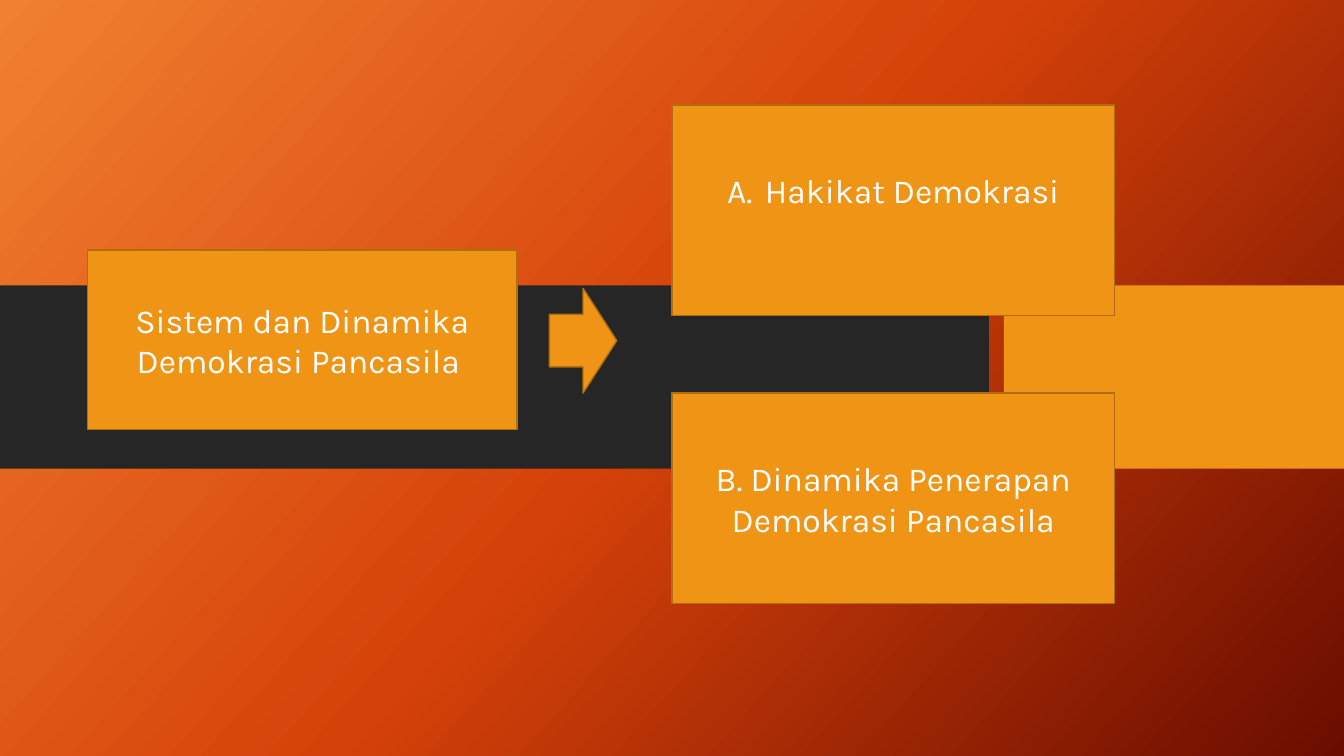
from copy import deepcopy

from lxml import etree
from pptx import Presentation
from pptx.dml.color import RGBColor
from pptx.enum import shapes, text
from pptx.oxml import ns
from pptx.util import Pt

COLORS = {
    "glow": "F18031", "flame": "D54209", "ember": "6A0D00",
    "band": "262626", "amber": "F09415", "edge": "B26D10", "text": "FFFFFF",
}
RECT = shapes.MSO_SHAPE.RECTANGLE


def rgb(name):
    return RGBColor.from_string(COLORS[name])


def add_block(kind, left, top, width, height, fill, edge=None):
    block = page.shapes.add_shape(kind, Pt(left), Pt(top), Pt(width), Pt(height))
    block.shadow.inherit = False
    block.fill.solid()
    block.fill.fore_color.rgb = rgb(fill)
    if edge:
        block.line.color.rgb = rgb(edge)
        block.line.width = Pt(1)
    else:
        block.line.fill.background()
    return block


deck = Presentation()
deck.slide_width, deck.slide_height = Pt(960), Pt(540)
page = deck.slides.add_slide(deck.slide_layouts[6])

# Diagonal background gradient with a third, middle stop
backdrop = page.background.fill
backdrop.gradient()
backdrop.gradient_angle = 360 - 42
stop_list = next(page.element.iter(ns.qn("a:gsLst")))
stop_list.insert(1, deepcopy(stop_list[0]))
for stop, position, name in zip(backdrop.gradient_stops, (0, 0.5, 1), ("glow", "flame", "ember")):
    stop.position = position
    stop.color.rgb = rgb(name)

# Horizontal band
add_block(RECT, 0, 203.8, 706.3, 131, "band")
add_block(RECT, 717.1, 203.8, 242.9, 131, "amber")

# Topic and its two sections
boxes = [
    (62.6, 178.6, 306.7, 128.2, "Sistem dan Dinamika Demokrasi Pancasila "),
    (480, 74.9, 316.1, 150.5, "Hakikat Demokrasi"),
    (480, 280.8, 316.1, 150.5, "B. Dinamika Penerapan Demokrasi Pancasila"),
]
paras = []
for left, top, width, height, wording in boxes:
    frame = add_block(RECT, left, top, width, height, "amber", "edge").text_frame
    frame.word_wrap = True
    frame.vertical_anchor = text.MSO_ANCHOR.MIDDLE
    para = frame.paragraphs[0]
    para.text = wording
    para.alignment = text.PP_ALIGN.CENTER
    paras.append((frame, para))

# The first section is numbered automatically and sits above the middle
frame, para = paras[1]
frame.margin_bottom = Pt(32)
properties = para._p.get_or_add_pPr()
properties.set("marL", str(Pt(27)))
properties.set("indent", str(Pt(-27)))
etree.SubElement(properties, ns.qn("a:buFont"), typeface="+mj-lt")
etree.SubElement(properties, ns.qn("a:buAutoNum"), type="alphaUcPeriod")

for frame, para in paras:
    para.font.name = "Karla"
    para.font.size = Pt(24)
    para.font.color.rgb = rgb("text")

add_block(shapes.MSO_SHAPE.RIGHT_ARROW, 392.4, 205.9, 48.2, 74.9, "amber", "edge")

deck.save("out.pptx")
